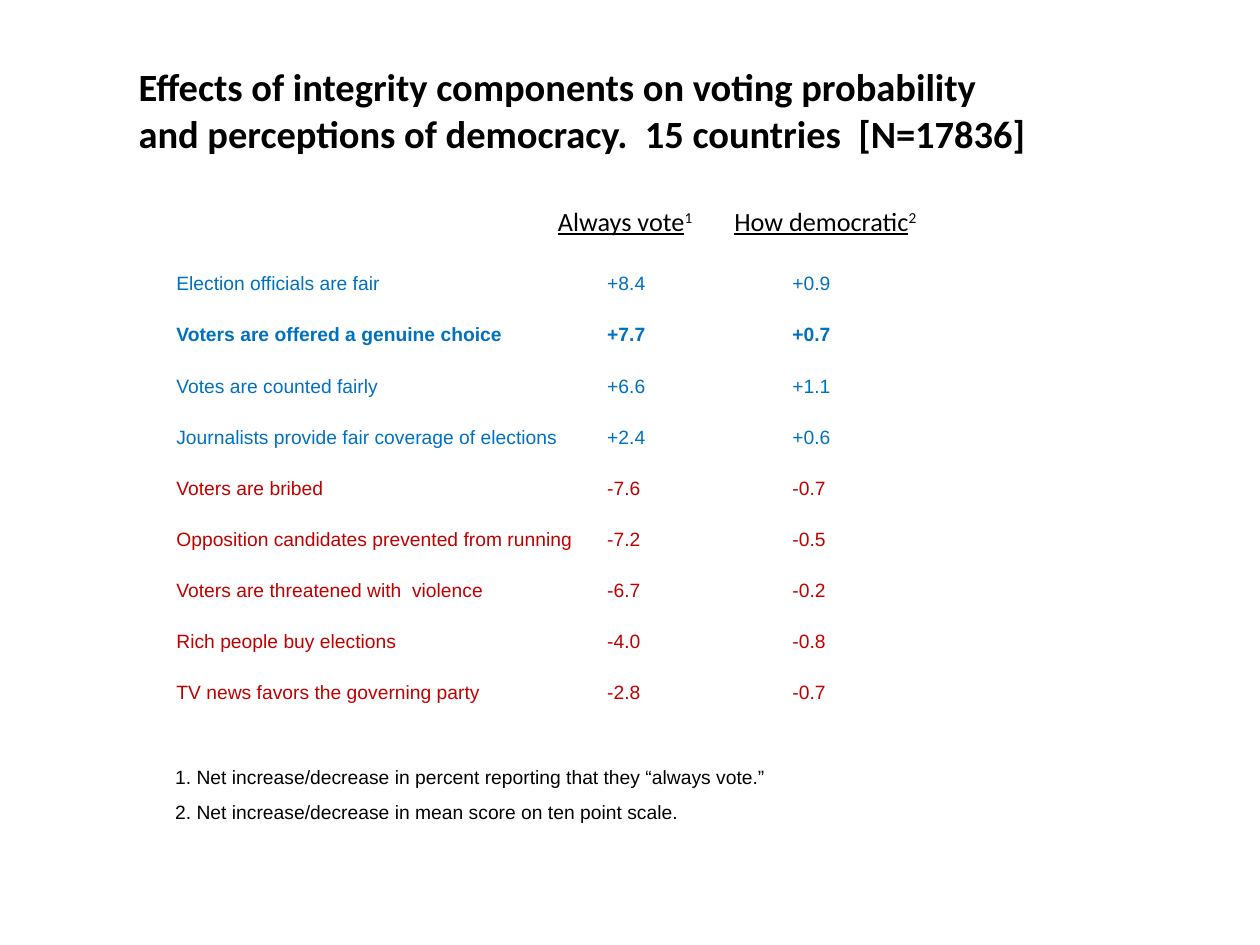
from dataclasses import dataclass

from lxml import etree
from pptx import Presentation
from pptx.dml.color import RGBColor
from pptx.enum.text import MSO_ANCHOR, PP_ALIGN
from pptx.oxml.ns import qn
from pptx.util import Inches, Pt

LEFT, TOP, MIDDLE = PP_ALIGN.LEFT, MSO_ANCHOR.TOP, MSO_ANCHOR.MIDDLE
TITLE_ONLY = 5
COLORS = {"ink": "000000", "positive": "0070C0", "negative": "C00000", "paper": "FFFFFF"}

TITLE_FORMAT = {"name": "Calibri", "size": Pt(22), "bold": True}
HEADING_FORMAT = {"name": "Calibri", "size": Pt(15)}
BODY_FORMAT = {"name": "Arial", "size": Pt(11), "bold": False}

COLUMN_WIDTHS = (3.42, 1.47, 2.44)
TABLE_HEIGHT = 3.65
SECOND_HEADING_TAB = 1.4


@dataclass
class Effect:
    component: str
    always_vote: str
    how_democratic: str
    bold: bool = False

    @property
    def color(self) -> str:
        return "positive" if self.always_vote.startswith("+") else "negative"


EFFECTS = [
    Effect("Election officials are fair", "+8.4", "+0.9"),
    Effect("Voters are offered a genuine choice", "+7.7", "+0.7", bold=True),
    Effect("Votes are counted fairly", "+6.6", "+1.1"),
    Effect("Journalists provide fair coverage of elections", "+2.4", "+0.6"),
    Effect("Voters are bribed", "-7.6", "-0.7"),
    Effect("Opposition candidates prevented from running", "-7.2", "-0.5"),
    Effect("Voters are threatened with  violence", "-6.7", "-0.2"),
    Effect("Rich people buy elections", "-4.0", "-0.8"),
    Effect("TV news favors the governing party", "-2.8", "-0.7"),
]
FOOTNOTES = [
    "1. Net increase/decrease in percent reporting that they “always vote.”",
    "2. Net increase/decrease in mean score on ten point scale.",
]


def format_font(font, values: dict, color: str = "ink") -> None:
    for attribute, value in values.items():
        setattr(font, attribute, value)
    font.color.rgb = RGBColor.from_string(COLORS[color])


def place(shape, left: float, top: float, width: float, height: float) -> None:
    box = {"left": left, "top": top, "width": width, "height": height}
    for attribute, value in box.items():
        setattr(shape, attribute, Inches(value))


def add_title(slide) -> None:
    title = slide.shapes.title
    place(title, 1, 0.33, 7.92, 1.08)
    frame = title.text_frame
    frame.vertical_anchor = MIDDLE
    frame.text = (
        "Effects of integrity components on voting probability \v"
        "and perceptions of democracy.  15 countries  [N=17836]"
    )
    paragraph = frame.paragraphs[0]
    paragraph.alignment = LEFT
    for run in paragraph.runs:
        format_font(run.font, TITLE_FORMAT)


def add_effects_table(slide) -> None:
    table = slide.shapes.add_table(
        len(EFFECTS), len(COLUMN_WIDTHS), Inches(1.33), Inches(2.17),
        Inches(sum(COLUMN_WIDTHS)), Inches(TABLE_HEIGHT),
    ).table
    table.first_row = table.horz_banding = False
    for column, width in zip(table.columns, COLUMN_WIDTHS):
        column.width = Inches(width)
    for row, effect in zip(table.rows, EFFECTS):
        texts = (effect.component, effect.always_vote, effect.how_democratic)
        for cell, text in zip(row.cells, texts):
            cell.fill.solid()
            cell.fill.fore_color.rgb = RGBColor.from_string(COLORS["paper"])
            cell.margin_left = cell.margin_right = Inches(0.07)
            cell.margin_top = cell.margin_bottom = 0
            cell.vertical_anchor = TOP
            cell.text = text
            font = cell.text_frame.paragraphs[0].runs[0].font
            format_font(font, BODY_FORMAT | {"bold": effect.bold}, effect.color)


def add_column_headings(slide) -> None:
    """Underlined headings with superscript note marks, split by a tab stop."""
    headings = slide.shapes.add_textbox(Inches(4.33), Inches(1.58), Inches(4.33), Inches(0.35))
    headings.text_frame.word_wrap = True
    paragraph = headings.text_frame.paragraphs[0]
    tabs = etree.SubElement(paragraph._p.get_or_add_pPr(), qn("a:tabLst"))
    etree.SubElement(tabs, qn("a:tab"), pos=str(Inches(SECOND_HEADING_TAB)), algn="l")
    for heading, mark in (("Always vote", "1\t"), ("How democratic", "2")):
        for text, is_mark in ((heading, False), (mark, True)):
            run = paragraph.add_run()
            run.text = text
            format_font(run.font, HEADING_FORMAT | {"underline": not is_mark})
            if is_mark:
                run._r.get_or_add_rPr().set("baseline", "30000")


def add_footnotes(slide) -> None:
    footnotes = slide.shapes.add_textbox(Inches(1.25), Inches(5.92), Inches(6.33), Inches(0.68))
    frame = footnotes.text_frame
    frame.word_wrap = True
    frame.vertical_anchor = MIDDLE
    frame.margin_left = Inches(0.14)
    frame.text = "\n".join(FOOTNOTES)
    for paragraph in frame.paragraphs:
        paragraph.line_spacing = 1.5
        format_font(paragraph.runs[0].font, BODY_FORMAT)


def main() -> None:
    presentation = Presentation()
    presentation.slide_width, presentation.slide_height = Inches(10), Inches(7.5)
    slide = presentation.slides.add_slide(presentation.slide_layouts[TITLE_ONLY])
    add_title(slide)
    add_effects_table(slide)
    add_column_headings(slide)
    add_footnotes(slide)
    presentation.save("out.pptx")


if __name__ == "__main__":
    main()
